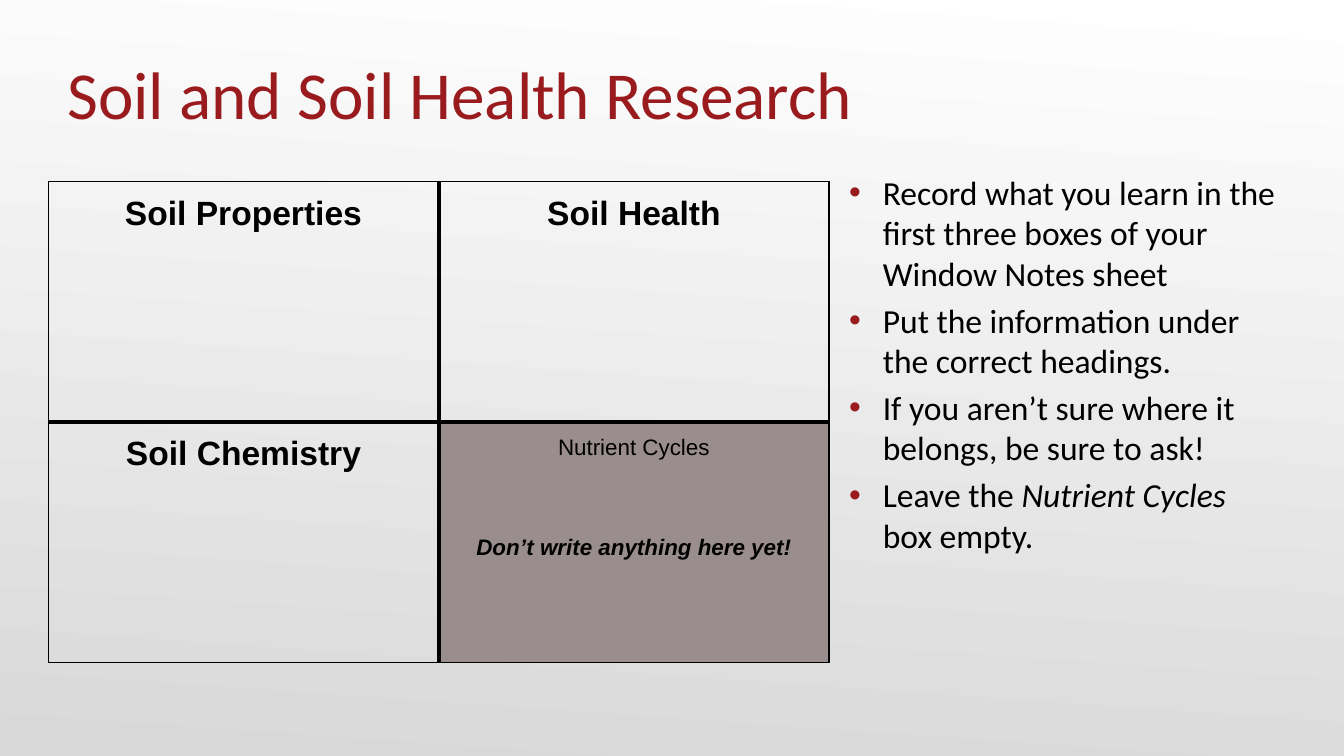
from dataclasses import dataclass

from lxml import etree
from pptx import Presentation, util as u
from pptx.dml.color import RGBColor
from pptx.enum import text
from pptx.oxml import ns


@dataclass(frozen=True)
class Theme:
    """Colours, fonts and type sizes of the slide."""
    accent: str = "991B1E"
    ink: str = "000000"
    shaded: str = "9A8D8D"
    light: str = "FFFFFF"
    dark: str = "D8D8D8"
    body_font: str = "Calibri"
    table_font: str = "Arial"
    title_size: float = 36
    text_size: float = 18
    small_size: float = 12
    outer_line: float = 1
    inner_line: float = 2.25


THEME = Theme()


def add_text(paragraph, words, font=THEME.body_font, size=THEME.text_size,
             color=THEME.ink, bold=False, italic=False):
    """Append one formatted run to a paragraph."""
    run = paragraph.add_run()
    run.text = words
    run.font.name = font
    run.font.size = u.Pt(size)
    run.font.color.rgb = RGBColor.from_string(color)
    run.font.bold = bold
    run.font.italic = italic


def add_bullet(paragraph):
    """Give a paragraph a hanging accent bullet."""
    properties = paragraph._p.get_or_add_pPr()
    properties.set("marL", str(u.Inches(0.25)))
    properties.set("indent", str(u.Inches(-0.25)))
    color = etree.SubElement(properties, ns.qn("a:buClr"))
    etree.SubElement(color, ns.qn("a:srgbClr"), val=THEME.accent)
    etree.SubElement(properties, ns.qn("a:buFont"), typeface="Arial")
    etree.SubElement(properties, ns.qn("a:buChar"), char="•")


def add_border(cell, side, width):
    """Draw one side of a table cell."""
    line = etree.SubElement(cell._tc.get_or_add_tcPr(), ns.qn(f"a:ln{side}"), w=str(u.Pt(width)))
    fill = etree.SubElement(line, ns.qn("a:solidFill"))
    etree.SubElement(fill, ns.qn("a:srgbClr"), val=THEME.ink)


def set_insets(frame, left, top, right, bottom):
    """Set the inner margins of a text frame or cell."""
    frame.margin_left, frame.margin_top = u.Inches(left), u.Inches(top)
    frame.margin_right, frame.margin_bottom = u.Inches(right), u.Inches(bottom)


def paint_background(slide):
    """Fill the background with a light-to-dark gradient."""
    fill = slide.background.fill
    fill.gradient()
    fill.gradient_angle = 266
    for stop, color, position in zip(fill.gradient_stops, (THEME.light, THEME.dark), (0, 1)):
        stop.color.rgb = RGBColor.from_string(color)
        stop.position = position


def place_title(slide, words, left, top, width, height):
    """Move and format the title placeholder."""
    title = slide.shapes.title
    title.left, title.top = u.Inches(left), u.Inches(top)
    title.width, title.height = u.Inches(width), u.Inches(height)
    frame = title.text_frame
    set_insets(frame, 0, 0.05, 0, 0)
    frame.vertical_anchor = text.MSO_ANCHOR.TOP
    frame.auto_size = text.MSO_AUTO_SIZE.NONE
    frame.paragraphs[0].alignment = text.PP_ALIGN.LEFT
    add_text(frame.paragraphs[0], words, size=THEME.title_size, color=THEME.accent)


def place_window_notes(slide, headings, left, top, width, height):
    """Place the window notes grid with its last box shaded."""
    rows, columns = len(headings), len(headings[0])
    grid = slide.shapes.add_table(rows, columns, u.Inches(left), u.Inches(top),
                                  u.Inches(width), u.Inches(height)).table
    grid.first_row = grid.horz_banding = False
    for row, names in enumerate(headings):
        for column, heading in enumerate(names):
            cell = grid.cell(row, column)
            set_insets(cell, 0.1, 0.1, 0.1, 0.1)
            outer_sides = {"L": column == 0, "R": column == columns - 1,
                           "T": row == 0, "B": row == rows - 1}
            for side, is_outer in outer_sides.items():
                add_border(cell, side, THEME.outer_line if is_outer else THEME.inner_line)
            cell.fill.background()
            is_last = (row, column) == (rows - 1, columns - 1)
            paragraph = cell.text_frame.paragraphs[0]
            paragraph.alignment = text.PP_ALIGN.CENTER
            add_text(paragraph, heading, font=THEME.table_font, bold=not is_last,
                     size=THEME.small_size if is_last else THEME.text_size)
    cell.fill.solid()
    cell.fill.fore_color.rgb = RGBColor.from_string(THEME.shaded)
    warning = cell.text_frame.add_paragraph()
    warning.alignment = text.PP_ALIGN.CENTER
    warning.space_before = u.Pt(40)
    add_text(warning, "Don’t write anything here yet!", font=THEME.table_font,
             size=THEME.small_size, bold=True, italic=True)


def place_instructions(slide, instructions, left, top, width, height):
    """Place the bulleted instructions, each a list of (words, italic)."""
    frame = slide.shapes.add_textbox(u.Inches(left), u.Inches(top),
                                     u.Inches(width), u.Inches(height)).text_frame
    frame.word_wrap = True
    set_insets(frame, 0.1, 0, 0.1, 0.05)
    for index, pieces in enumerate(instructions):
        paragraph = frame.add_paragraph() if index else frame.paragraphs[0]
        add_bullet(paragraph)
        if index:
            paragraph.space_before = u.Pt(3.6)
        for words, italic in pieces:
            add_text(paragraph, words, italic=italic)


def main():
    """Build and save the slide."""
    deck = Presentation()
    deck.slide_width = u.Inches(10)
    deck.slide_height = deck.slide_width * 9 // 16
    slide = deck.slides.add_slide(deck.slide_layouts.get_by_name("Title Only"))
    paint_background(slide)
    place_title(slide, "Soil and Soil Health Research", 0.5, 0.34, 9, 0.94)
    place_instructions(slide, [
        [("Record what you learn in the first three boxes of your Window Notes sheet", False)],
        [("Put the information under the correct headings.", False)],
        [("If you aren’t sure where it belongs, be sure to ask!", False)],
        [("Leave the ", False), ("Nutrient Cycles ", True), ("box empty.", False)],
    ], 6.22, 1.28, 3.42, 3.7)
    place_window_notes(slide, [["Soil Properties", "Soil Health"],
                               ["Soil Chemistry", "Nutrient Cycles"]], 0.36, 1.35, 5.81, 3.58)
    deck.save("out.pptx")


if __name__ == "__main__":
    main()
